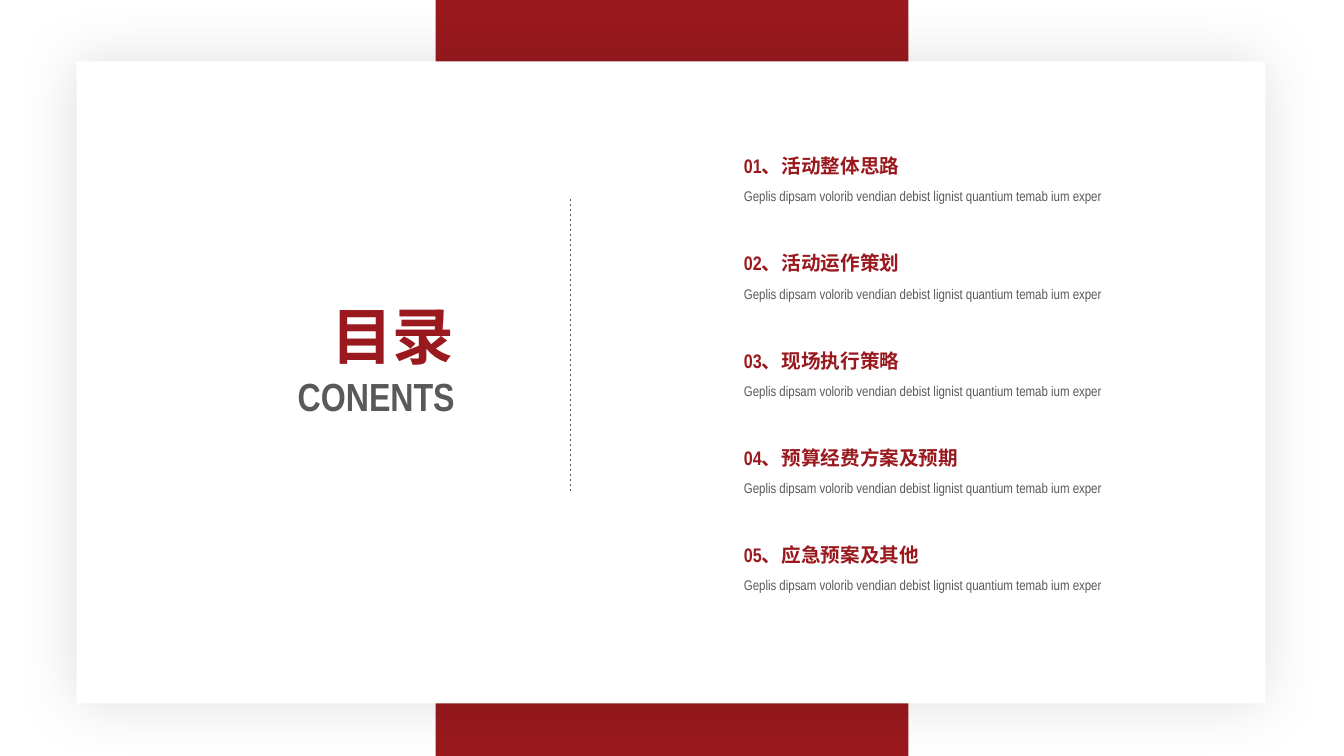
from dataclasses import dataclass

from lxml.etree import SubElement
from pptx import Presentation
from pptx.dml.color import RGBColor
from pptx.enum.dml import MSO_LINE
from pptx.enum.shapes import MSO_CONNECTOR, MSO_SHAPE
from pptx.enum.text import MSO_ANCHOR, MSO_AUTO_SIZE, PP_ALIGN
from pptx.oxml.ns import qn
from pptx.util import Inches, Pt


@dataclass(frozen=True)
class Theme:
    font: str = "Arial Narrow"
    red: RGBColor = RGBColor(0x99, 0x19, 0x1E)
    gray: RGBColor = RGBColor(0x59, 0x59, 0x59)
    white: RGBColor = RGBColor(0xFF, 0xFF, 0xFF)
    title: int = 44
    subtitle: int = 28
    heading: int = 14
    body: int = 10


@dataclass(frozen=True)
class Box:
    left: int
    top: int
    width: int
    height: int

    def inner(self, left, top, width, height):
        """Return the inner box whose sides are given in percent of this one."""
        return Box(
            round(self.left + self.width * left / 100),
            round(self.top + self.height * top / 100),
            round(self.width * width / 100),
            round(self.height * height / 100),
        )

    def split_rows(self, count):
        return [self.inner(0, 100 * row / count, 100, 100 / count) for row in range(count)]

    @property
    def frame(self):
        return self.left, self.top, self.width, self.height


THEME = Theme()
DESCRIPTION = "Geplis dipsam volorib vendian debist lignist quantium temab ium exper"
TOPICS = [
    "活动整体思路",
    "活动运作策划",
    "现场执行策略",
    "预算经费方案及预期",
    "应急预案及其他",
]


def write(para, text, size, color, bold=False, align=PP_ALIGN.LEFT, spacing=1.0):
    para.alignment = align
    para.line_spacing = spacing
    span = para.add_run()
    span.text = text
    font = span.font
    font.name, font.size, font.bold = THEME.font, Pt(size), bold
    font.color.rgb = color
    SubElement(span._r.get_or_add_rPr(), qn("a:ea"), typeface=THEME.font)


def fit_frame(frame):
    frame.word_wrap = True
    frame.auto_size = MSO_AUTO_SIZE.SHAPE_TO_FIT_TEXT
    frame.vertical_anchor = MSO_ANCHOR.TOP


def add_text(shapes, box, text, **style):
    frame = shapes.add_textbox(*box.frame).text_frame
    fit_frame(frame)
    write(frame.paragraphs[0], text, **style)


def add_panel(page, box, color):
    panel = page.shapes.add_shape(MSO_SHAPE.RECTANGLE, *box.frame)
    panel.shadow.inherit = False
    panel.fill.solid()
    panel.fill.fore_color.rgb = color
    panel.line.fill.background()
    return panel


def add_glow(panel, blur, opacity):
    """Give the panel a soft black shadow on all sides."""
    effects = panel.element.spPr.find(qn("a:effectLst"))
    shadow = SubElement(effects, qn("a:outerShdw"), blurRad=str(Pt(blur)),
                        dist="0", dir="0", algn="ctr", rotWithShape="0")
    black = SubElement(shadow, qn("a:srgbClr"), val="000000")
    SubElement(black, qn("a:alpha"), val=str(opacity * 1000))


def place_title(page, box):
    title = page.shapes.title
    title.left, title.top, title.width, title.height = box.frame
    page.shapes.element.append(title.element)  # in front of the card
    frame = title.text_frame
    fit_frame(frame)
    write(frame.paragraphs[0], "目录", size=THEME.title, color=THEME.red,
          bold=True, align=PP_ALIGN.RIGHT)
    write(frame.add_paragraph(), "CONENTS", size=THEME.subtitle, color=THEME.gray,
          bold=True, align=PP_ALIGN.RIGHT)


def add_divider(page, box):
    divider = page.shapes.add_connector(
        MSO_CONNECTOR.STRAIGHT, box.left, box.top, box.left, box.top + box.height)
    divider.line.color.rgb = THEME.gray
    divider.line.width = Pt(0.5)
    divider.line.dash_style = MSO_LINE.DASH
    SubElement(divider.element.spPr, qn("a:effectLst"))


def add_topics(page, box):
    rows = box.split_rows(len(TOPICS))
    for number, (topic, row) in enumerate(zip(TOPICS, rows), start=1):
        group = page.shapes.add_group_shape()
        add_text(group.shapes, row.inner(0, 0, 68.7, 35.23), f"{number:02}、{topic}",
                 size=THEME.heading, color=THEME.red, bold=True)
        add_text(group.shapes, row.inner(0, 25.91, 100, 33.16), DESCRIPTION,
                 size=THEME.body, color=THEME.gray, spacing=1.5)


def build_contents(page, box):
    add_panel(page, box.inner(32.41, 0, 35.18, 100), THEME.red)
    card = box.inner(5.7, 8.13, 88.45, 84.93)
    add_glow(add_panel(page, card, THEME.white), blur=44, opacity=12)
    place_title(page, card.inner(13.4, 36.11, 19.25, 20.57))
    add_divider(page, card.inner(41.56, 21.35, 0, 45.84))
    add_topics(page, card.inner(55.3, 13.66, 33.33, 75.75))


def main():
    deck = Presentation()
    deck.slide_width, deck.slide_height = Inches(13.33), Inches(7.5)
    page = deck.slides.add_slide(deck.slide_layouts[5])
    build_contents(page, Box(0, 0, deck.slide_width, deck.slide_height))
    deck.save("out.pptx")


if __name__ == "__main__":
    main()
